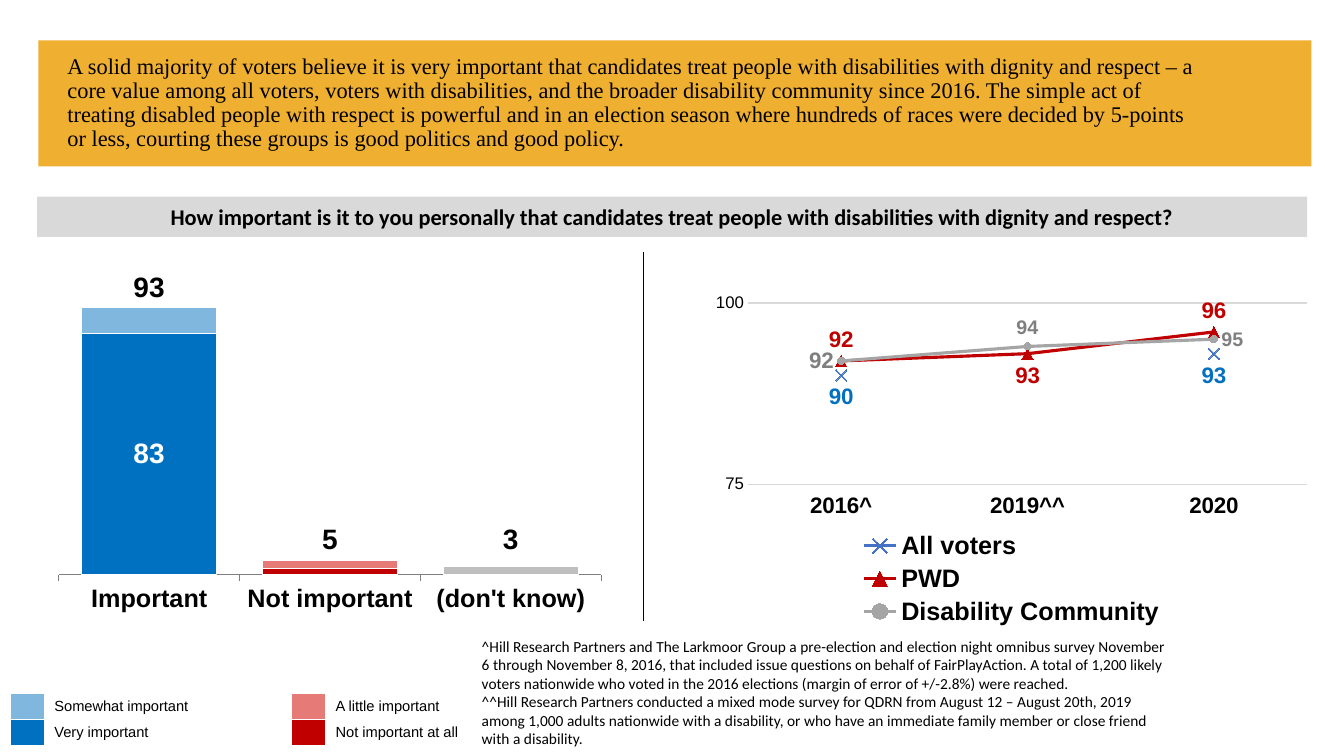
from lxml import etree
from pptx import Presentation
from pptx.chart.data import CategoryChartData
from pptx.dml.color import RGBColor
from pptx.enum.chart import (XL_CHART_TYPE, XL_LABEL_POSITION, XL_LEGEND_POSITION,
                             XL_MARKER_STYLE, XL_TICK_LABEL_POSITION, XL_TICK_MARK)
from pptx.enum.shapes import MSO_CONNECTOR, MSO_SHAPE
from pptx.enum.text import MSO_ANCHOR, MSO_AUTO_SIZE, PP_ALIGN
from pptx.oxml.ns import qn
from pptx.util import Pt

BLACK = RGBColor(0x00, 0x00, 0x00)
WHITE = RGBColor(0xFF, 0xFF, 0xFF)
GOLD = RGBColor(0xEF, 0xAF, 0x30)
BLUE = RGBColor(0x00, 0x70, 0xC0)
PALE_BLUE = RGBColor(0x80, 0xB7, 0xDF)
MARKER_BLUE = RGBColor(0x44, 0x72, 0xC4)
RED = RGBColor(0xC0, 0x00, 0x00)
PALE_RED = RGBColor(0xE5, 0x7A, 0x77)
SILVER = RGBColor(0xBF, 0xBF, 0xBF)
GREY = RGBColor(0xA5, 0xA5, 0xA5)
DARK_GREY = RGBColor(0x7F, 0x7F, 0x7F)
LIGHT_GREY = RGBColor(0xD9, 0xD9, 0xD9)
ABOVE, BELOW = XL_LABEL_POSITION.ABOVE, XL_LABEL_POSITION.BELOW
LEFT, RIGHT = XL_LABEL_POSITION.LEFT, XL_LABEL_POSITION.RIGHT
NO_TICK = XL_TICK_MARK.NONE


def set_font(font, size, color=BLACK, bold=False, name="Arial"):
    font.name, font.size, font.bold = name, Pt(size), bold
    font.color.rgb = color


def set_layout(parent, index, **settings):
    """Give a chart part a manual layout, as fractions of the chart."""
    for old in parent.findall(qn("c:layout")):
        parent.remove(old)
    layout = etree.Element(qn("c:layout"))
    manual = etree.SubElement(layout, qn("c:manualLayout"))
    for tag, value in settings.items():
        etree.SubElement(manual, qn("c:" + tag)).set("val", str(value))
    parent.insert(index, layout)


prs = Presentation()
prs.slide_width, prs.slide_height = Pt(960), Pt(540)
slide = prs.slides.add_slide(prs.slide_layouts[5])
shapes = slide.shapes

# Headline
headline = shapes.title
headline.left, headline.top, headline.width, headline.height = Pt(41), Pt(28.8), Pt(828), Pt(90)
headline_frame = headline.text_frame
headline_frame.text = (
    "A solid majority of voters believe it is very important that candidates treat people with "
    "disabilities with dignity and respect – a core value among all voters, voters with "
    "disabilities, and the broader disability community since 2016. The simple act of treating "
    "disabled people with respect is powerful and in an election season where hundreds of races "
    "were decided by 5-points or less, courting these groups is good politics and good policy.")
headline_frame.word_wrap = True
headline_frame.auto_size = MSO_AUTO_SIZE.NONE
headline_frame.vertical_anchor = MSO_ANCHOR.MIDDLE
headline_frame.paragraphs[0].alignment = PP_ALIGN.LEFT
headline_frame.paragraphs[0].line_spacing = 0.9
set_font(headline_frame.paragraphs[0].runs[0].font, 16, name="Times New Roman")

# Stacked columns: importance today
importance_data = CategoryChartData()
importance_data.categories = ["Important", "Not important", "(don't know)"]
importance_data.add_series("Series 1", (83, 2, 3))
importance_data.add_series("Series 2", (9, 3, None))
importance_data.add_series("Series 3", (93, 5, None))
importance = shapes.add_chart(XL_CHART_TYPE.COLUMN_STACKED, Pt(35.3), Pt(190.8),
                              Pt(401), Pt(252.7), importance_data).chart
importance.has_legend = importance.has_title = False
set_font(importance.font, 14)
set_layout(importance._chartSpace.chart.plotArea, 0, layoutTarget="inner", xMode="edge",
           yMode="edge", x=0.017, y=0.048, w=0.966, h=0.822)
columns = importance.plots[0]
columns.gap_width, columns.overlap = 34, 100
columns.vary_by_categories = False
answers = importance.category_axis
set_font(answers.tick_labels.font, 18, bold=True)
answers.format.line.color.rgb = DARK_GREY
answers.format.line.width = Pt(0.75)
percent = importance.value_axis
percent.minimum_scale, percent.maximum_scale = 0, 100
percent.has_major_gridlines = percent.visible = False

strong, mild, total = columns.series
for series, colors in ((strong, (BLUE, RED, SILVER)), (mild, (PALE_BLUE, PALE_RED))):
    for index, color in enumerate(colors):
        part = series.points[index].format
        part.fill.solid()
        part.fill.fore_color.rgb = color
        part.line.color.rgb = WHITE
        part.line.width = Pt(0.75)
total.format.fill.background()
total.format.line.color.rgb = WHITE
total.data_labels.show_value = True
total.data_labels.position = XL_LABEL_POSITION.INSIDE_BASE
set_font(total.data_labels.font, 20, bold=True)
strong.data_labels.show_value = False
for index, color in ((0, WHITE), (2, BLACK)):
    set_font(strong.points[index].data_label.font, 20, color, True)

# Lift the last label above its column, without a leader line
strong_labels = strong._element.find(qn("c:dLbls"))
unsure_label = strong_labels.xpath("c:dLbl[c:idx/@val='2']")[0]
set_layout(unsure_label, 1, x=0, y=-0.085)
for leader in strong_labels.findall(qn("c:showLeaderLines")):
    strong_labels.remove(leader)
etree.SubElement(strong_labels, qn("c:showLeaderLines"), val="0")

# Lines: trend since 2016
trend_data = CategoryChartData()
trend_data.categories = ["2016^", "2019^^", "2020"]
trend_data.add_series("All voters", (90, None, 93))
trend_data.add_series("PWD", (92, 93, 96))
trend_data.add_series("Disability Community", (92, 94, 95))
trend = shapes.add_chart(XL_CHART_TYPE.LINE_MARKERS, Pt(502.6), Pt(205.9),
                         Pt(439.9), Pt(245.5), trend_data).chart
trend.has_title = False
set_font(trend.font, 10)
set_layout(trend._chartSpace.chart.plotArea, 0, layoutTarget="inner", xMode="edge",
           yMode="edge", x=0.072, y=0.043, w=0.908, h=0.527)
trend.has_legend = True
trend.legend.position = XL_LEGEND_POSITION.BOTTOM
trend.legend.include_in_layout = False
set_font(trend.legend.font, 18, bold=True)
set_layout(trend.legend._element, 1, xMode="edge", yMode="edge", x=0.235, y=0.695, w=0.53, h=0.3)
years, share = trend.category_axis, trend.value_axis
share.minimum_scale, share.maximum_scale, share.major_unit = 75, 100, 25
share.major_tick_mark = years.major_tick_mark = NO_TICK
share.format.line.fill.background()
set_font(share.tick_labels.font, 12)
set_font(years.tick_labels.font, 16, bold=True)
years.tick_label_position = XL_TICK_LABEL_POSITION.LOW
for rule in (years.format.line, share.major_gridlines.format.line):
    rule.color.rgb = LIGHT_GREY
    rule.width = Pt(0.75)

groups = (
    (MARKER_BLUE, XL_MARKER_STYLE.X, 8, BLUE, {0: (BELOW, 16), 2: (BELOW, 16)}),
    (RED, XL_MARKER_STYLE.TRIANGLE, 8, RED, {0: (ABOVE, 16), 1: (BELOW, 16), 2: (ABOVE, 16)}),
    (GREY, XL_MARKER_STYLE.CIRCLE, 5, DARK_GREY,
     {0: (LEFT, 16), 1: (ABOVE, 14), 2: (RIGHT, 14)}),
)
for series, (color, marker, size, label_color, labels) in zip(trend.plots[0].series, groups):
    series.smooth = False
    series.format.line.color.rgb = color
    series.format.line.width = Pt(2.25)
    series.marker.style, series.marker.size = marker, size
    series.marker.format.fill.solid()
    series.marker.format.fill.fore_color.rgb = color
    series.marker.format.line.color.rgb = color
    series.data_labels.show_value = False
    for index, (position, label_size) in labels.items():
        label = series.points[index].data_label
        set_font(label.font, label_size, label_color, True)
        label.position = position

# Colour key for the columns
key = shapes.add_table(2, 4, Pt(7.2), Pt(495.4), Pt(410.4), Pt(37)).table
key.first_row = key.horz_banding = False
for column, width in zip(key.columns, (24.5, 176.4, 24.5, 185)):
    column.width = Pt(width)
key_rows = ((PALE_BLUE, "Somewhat important", PALE_RED, "A little important"),
            (BLUE, "Very important", RED, "Not important at all"))
for row, entries in zip(key.rows, key_rows):
    row.height = Pt(18.5)
    for cell, entry in zip(row.cells, entries):
        cell.margin_top = cell.margin_bottom = Pt(2)
        cell.vertical_anchor = MSO_ANCHOR.MIDDLE
        for side in ("lnL", "lnR", "lnT", "lnB"):
            border = etree.SubElement(cell._tc.tcPr, qn("a:" + side), w="12700")
            stroke = etree.SubElement(border, qn("a:solidFill"))
            etree.SubElement(stroke, qn("a:srgbClr"), val=str(WHITE))
        if isinstance(entry, str):
            cell.fill.background()
            cell.text_frame.text = entry
            set_font(cell.text_frame.paragraphs[0].runs[0].font, 10.5)
        else:
            cell.fill.solid()
            cell.fill.fore_color.rgb = entry
            cell.text_frame.paragraphs[0].font.size = Pt(10.5)

# Divider between the charts
divider = shapes.add_connector(MSO_CONNECTOR.STRAIGHT, Pt(460), Pt(180), Pt(460), Pt(443.5))
divider.line.color.rgb = BLACK
divider.line.width = Pt(0.75)
etree.SubElement(divider._element.spPr, qn("a:effectLst"))

# Filled boxes: the band goes behind the title, the notes in front of the key
band = shapes.add_shape(MSO_SHAPE.RECTANGLE, Pt(27.4), Pt(28.8), Pt(909.4), Pt(90))
question = shapes.add_shape(MSO_SHAPE.RECTANGLE, Pt(26.6), Pt(140.4), Pt(907.2), Pt(28.8))
footnotes = shapes.add_shape(MSO_SHAPE.RECTANGLE, Pt(337), Pt(451.4), Pt(505.4), Pt(87.1))
for box, color in ((band, GOLD), (question, LIGHT_GREY), (footnotes, WHITE)):
    box.shadow.inherit = False
    box.fill.solid()
    box.fill.fore_color.rgb = color
    box.line.fill.background()
    box.text_frame.word_wrap = True
    box.text_frame.vertical_anchor = MSO_ANCHOR.MIDDLE
shapes._spTree.insert(2, band._element)

# Survey question and notes
question.text_frame.text = ("How important is it to you personally that candidates treat people "
                            "with disabilities with dignity and respect?")
question.text_frame.paragraphs[0].alignment = PP_ALIGN.CENTER
set_font(question.text_frame.paragraphs[0].runs[0].font, 16, bold=True, name="Calibri")
footnotes.text_frame.text = (
    "^Hill Research Partners and The Larkmoor Group a pre-election and election night omnibus "
    "survey November 6 through November 8, 2016, that included issue questions on behalf of "
    "FairPlayAction. A total of 1,200 likely voters nationwide who voted in the 2016 elections "
    "(margin of error of +/-2.8%) were reached.\n"
    "^^Hill Research Partners conducted a mixed mode survey for QDRN from August 12 – August "
    "20th, 2019 among 1,000 adults nationwide with a disability, or who have an immediate family "
    "member or close friend with a disability.")
footnotes.text_frame.vertical_anchor = MSO_ANCHOR.TOP
for note in footnotes.text_frame.paragraphs:
    note.alignment = PP_ALIGN.LEFT
    set_font(note.runs[0].font, 11, name="Calibri")

prs.save("out.pptx")
